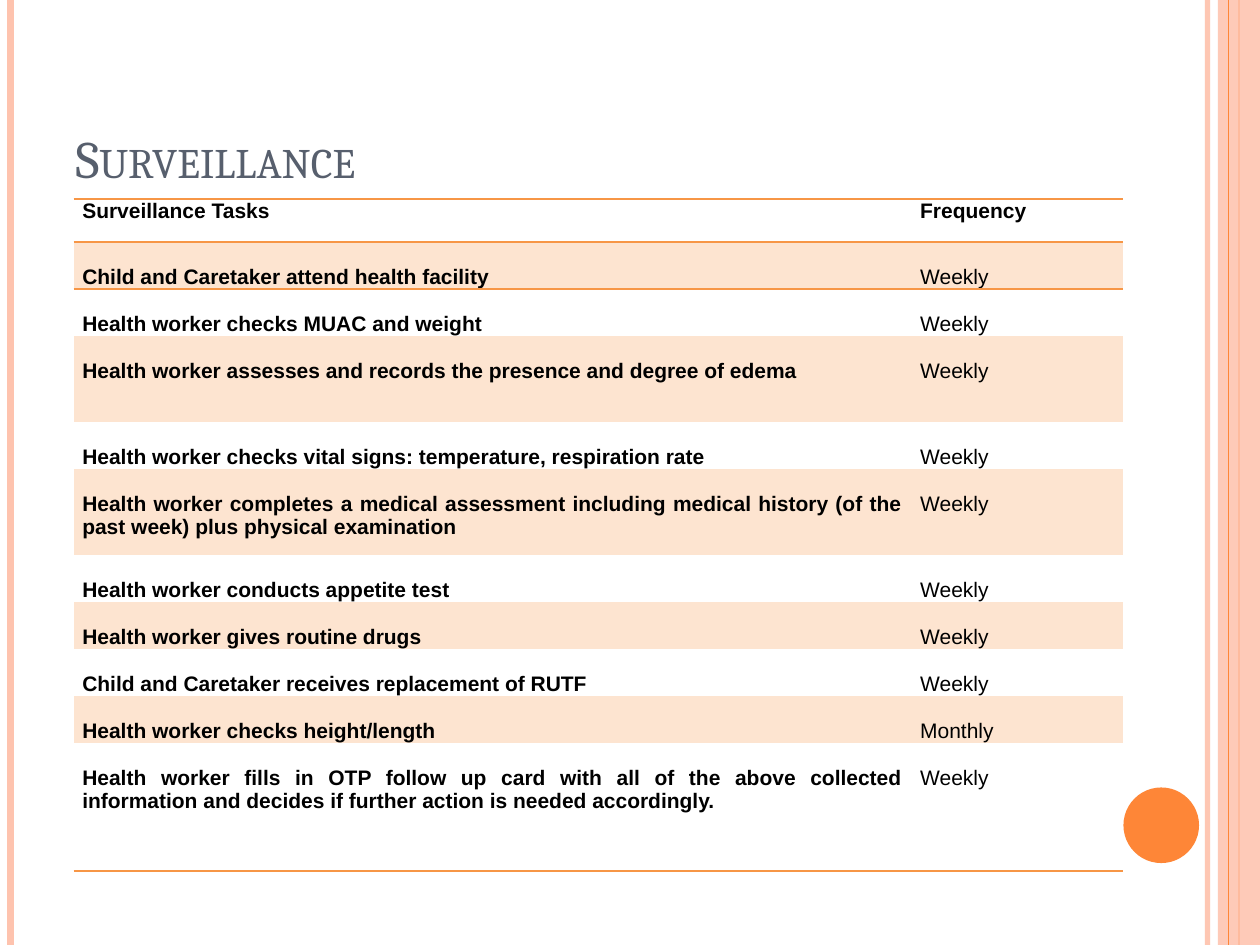
from lxml.etree import SubElement
from pptx import Presentation
from pptx.dml.color import RGBColor
from pptx.enum.shapes import MSO_CONNECTOR, MSO_SHAPE
from pptx.enum.text import MSO_ANCHOR, PP_ALIGN
from pptx.oxml import parse_xml
from pptx.oxml.ns import nsdecls, qn
from pptx.util import Pt

COLORS = {
    "peach": "FEC3AE",
    "orange": "FE8637",
    "slate": "575F6D",
    "black": "000000",
    "band": "FDE4D0",
    "rule": "F79646",
}
WIDE, HIGH = 720, 540
LINE = 13.4

TASKS = [
    ("Child and Caretaker attend health facility", "Weekly", 26.9),
    ("Health worker checks MUAC and weight", "Weekly", 26.9),
    ("Health worker assesses and records the presence and degree of edema", "Weekly", 49),
    ("Health worker checks vital signs: temperature, respiration rate", "Weekly", 26.9),
    ("Health worker completes a medical assessment including medical history "
     "(of the past week) plus physical examination", "Weekly", 49),
    ("Health worker conducts appetite test", "Weekly", 26.9),
    ("Health worker gives routine drugs", "Weekly", 26.9),
    ("Child and Caretaker receives replacement of RUTF", "Weekly", 26.9),
    ("Health worker checks height/length", "Monthly", 26.9),
    ("Health worker fills in OTP follow up card with all of the above collected "
     "information and decides if further action is needed accordingly.", "Weekly", 73.4),
]


def shade(name):
    return RGBColor.from_string(COLORS[name])


class Painter:
    def __init__(self, slide):
        self.slide = slide
        self.font = "Arial"
        self.size = 12

    def fade(self, fill, alpha):
        color = fill._xPr.find(qn("a:solidFill"))[0]
        SubElement(color, qn("a:alpha"), val=str(alpha * 1000))

    def stripe(self, x, width, color, alpha=100):
        line = self.slide.shapes.add_connector(
            MSO_CONNECTOR.STRAIGHT, Pt(x), Pt(0), Pt(x), Pt(HIGH))
        line.line.width = Pt(width)
        line.line.color.rgb = shade(color)
        if alpha < 100:
            self.fade(line.line.fill, alpha)
        SubElement(line._element.spPr, qn("a:effectLst"))

    def block(self, kind, x, y, w, h, color, alpha=100):
        shape = self.slide.shapes.add_shape(kind, Pt(x), Pt(y), Pt(w), Pt(h))
        shape.shadow.inherit = False
        shape.fill.solid()
        shape.fill.fore_color.rgb = shade(color)
        if alpha < 100:
            self.fade(shape.fill, alpha)
        shape.line.fill.background()

    def title(self, text, x, y, w, h):
        title = self.slide.shapes.title
        title.left, title.top, title.width, title.height = Pt(x), Pt(y), Pt(w), Pt(h)
        frame = title.text_frame
        frame.text = text
        frame.vertical_anchor = MSO_ANCHOR.BOTTOM
        frame.paragraphs[0].alignment = PP_ALIGN.LEFT
        run = frame.paragraphs[0].runs[0]
        run.font.name = "Cambria"
        run.font.size = Pt(30)
        run.font.color.rgb = shade("slate")
        run._r.get_or_add_rPr().set("cap", "small")

    def edge(self, cell, sides):
        props = cell._tc.get_or_add_tcPr()
        for spot, side in enumerate(sides):
            props.insert(spot, parse_xml(
                f'<a:ln{side} {nsdecls("a")} w="12700"><a:solidFill>'
                f'<a:srgbClr val="{COLORS["rule"]}"/></a:solidFill></a:ln{side}>'))

    def cell(self, cell, text, bold, top, fill):
        cell.margin_left = cell.margin_right = Pt(5.04)
        cell.margin_top, cell.margin_bottom = Pt(top), Pt(0)
        if fill:
            cell.fill.solid()
            cell.fill.fore_color.rgb = shade(fill)
        else:
            cell.fill.background()
        cell.text_frame.text = text
        para = cell.text_frame.paragraphs[0]
        para.alignment = PP_ALIGN.JUSTIFY
        font = para.runs[0].font
        font.name, font.size, font.bold = self.font, Pt(self.size), bold
        font.color.rgb = shade("black")

    def table(self, head, tasks, x, y, widths):
        rows = [(*head, 24.5)] + tasks
        high = sum(row[-1] for row in rows)
        frame = self.slide.shapes.add_table(
            len(rows), len(widths), Pt(x), Pt(y), Pt(sum(widths)), Pt(high))
        table = frame.table
        table.first_row = table.horz_banding = False
        style = table._tbl.tblPr.find(qn("a:tableStyleId"))
        style.text = "{2D5ABB26-0587-4C30-8999-92F81FD0307C}"
        for col, width in zip(table.columns, widths):
            col.width = Pt(width)
        edges = {0: "TB", 1: "T", len(rows) - 1: "B"}
        for i, (task, often, tall) in enumerate(rows):
            table.rows[i].height = Pt(tall)
            for j, text in enumerate((task, often)):
                cell = table.cell(i, j)
                self.cell(cell, text, i == 0 or j == 0,
                          LINE if i else 0, "band" if i % 2 else None)
                self.edge(cell, edges.get(i, ""))


def main():
    deck = Presentation()
    deck.slide_width, deck.slide_height = Pt(WIDE), Pt(HIGH)
    pen = Painter(deck.slides.add_slide(deck.slide_layouts[5]))
    pen.stripe(690, 3, "peach", 93)
    pen.stripe(6, 4.5, "peach")
    pen.stripe(708, 1.5, "orange")
    pen.block(MSO_SHAPE.RECTANGLE, 696, 0, 24, HIGH, "peach", 87)
    pen.stripe(702, 0.75, "orange")
    pen.block(MSO_SHAPE.OVAL, 642, 450, 43.2, 43.2, "orange")
    pen.title("Surveillance", 36, 21.6, 648, 90)
    pen.table(("Surveillance Tasks", "Frequency"), TASKS, 42, 113.8, (478.8, 121))
    deck.save("out.pptx")


if __name__ == "__main__":
    main()
